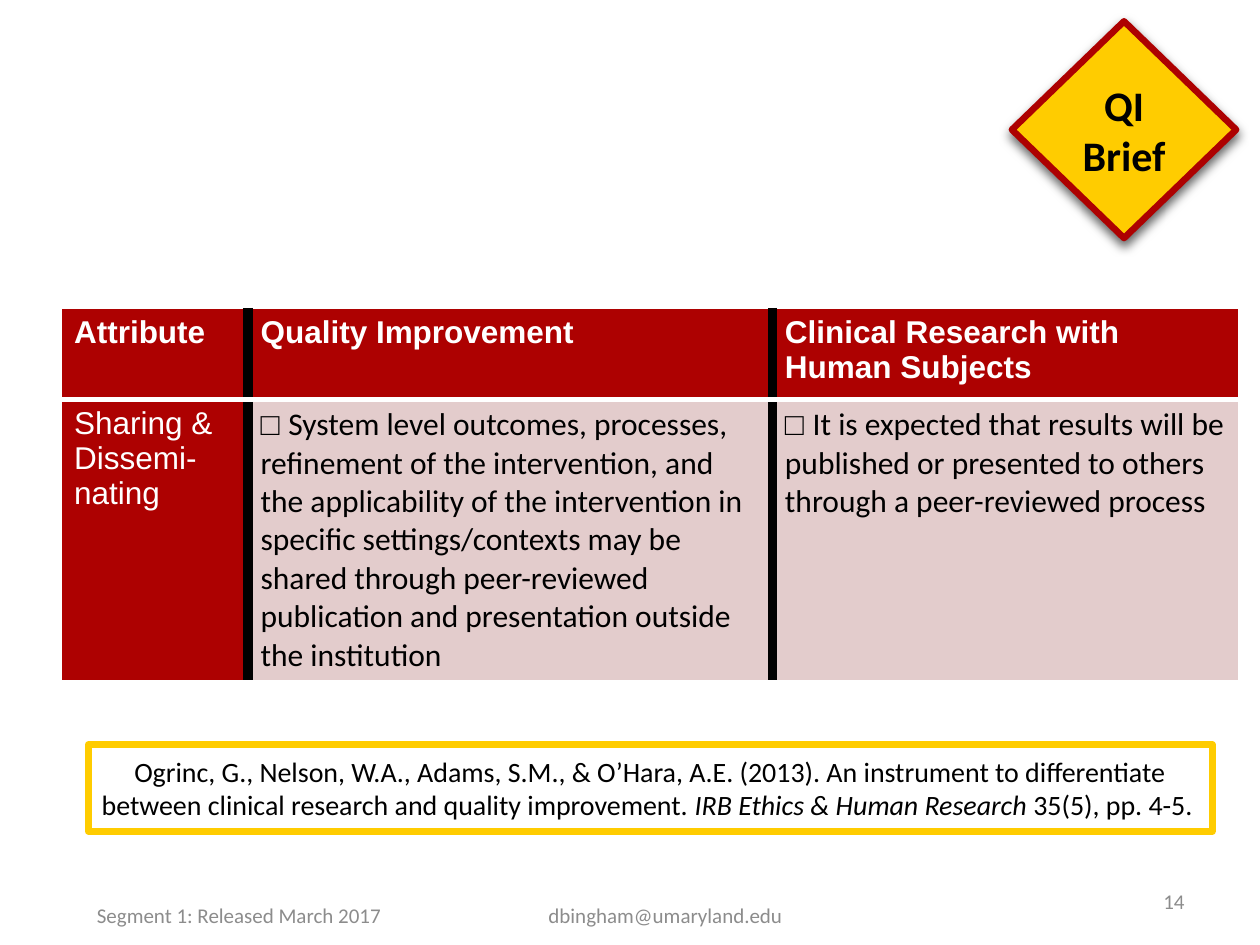
from dataclasses import dataclass

from lxml import etree
from pptx import Presentation
from pptx.dml.color import RGBColor
from pptx.enum.shapes import MSO_SHAPE
from pptx.enum.text import MSO_ANCHOR, PP_ALIGN
from pptx.oxml.ns import qn
from pptx.util import Cm, Length, Pt

DIAMOND, RECT = MSO_SHAPE.FLOWCHART_DECISION, MSO_SHAPE.RECTANGLE
MIDDLE = MSO_ANCHOR.MIDDLE
LEFT, CENTER, RIGHT = PP_ALIGN.LEFT, PP_ALIGN.CENTER, PP_ALIGN.RIGHT

RED = RGBColor(0xAD, 0x01, 0x01)
YELLOW = RGBColor(0xFF, 0xCC, 0x00)
PINK = RGBColor(0xE3, 0xCC, 0xCC)
GREY = RGBColor(0x8C, 0x8C, 0x8C)
BLACK = RGBColor(0, 0, 0)
WHITE = RGBColor(0xFF, 0xFF, 0xFF)


@dataclass
class Span:
    text: str
    font: str | None = None
    bold: bool | None = None
    italic: bool | None = None


@dataclass
class Box:
    left: Length
    top: Length
    width: Length
    height: Length


@dataclass
class Footer:
    text: str
    box: Box
    align: PP_ALIGN = CENTER


@dataclass
class Entry:
    spans: list[Span]
    fill: RGBColor
    color: RGBColor


def write(tf, spans: list[Span], size: int, color: RGBColor, align=CENTER, font="Calibri"):
    tf.word_wrap = True
    p = tf.paragraphs[0]
    p.alignment = align
    p.font.size, p.font.name = Pt(size), font
    p.font.color.rgb = color
    for span in spans:
        r = p.add_run()
        r.text = span.text
        if span.font:
            r.font.name = span.font
        r.font.bold, r.font.italic = span.bold, span.italic


def add_panel(s, kind, box: Box, fill: RGBColor, line: RGBColor, spans: list[Span], size: int):
    sp = s.shapes.add_shape(kind, box.left, box.top, box.width, box.height)
    sp.shadow.inherit = False
    sp.fill.solid()
    sp.fill.fore_color.rgb = fill
    sp.line.color.rgb = line
    sp.line.width = Pt(3.75)
    etree.SubElement(sp.line._get_or_add_ln(), qn("a:round"))
    sp.text_frame.vertical_anchor = MIDDLE
    write(sp.text_frame, spans, size, BLACK)
    return sp


def add_drop_shadow(sp):
    effects = sp._element.spPr.find(qn("a:effectLst"))
    shadow = etree.SubElement(effects, qn("a:outerShdw"), blurRad=str(Pt(6)),
                              dist=str(Pt(3)), dir="5400000", rotWithShape="0")
    color = etree.SubElement(shadow, qn("a:srgbClr"), val=str(BLACK))
    etree.SubElement(color, qn("a:alpha"), val="60000")


def add_border(cell, side: str, color: RGBColor, width: int):
    ln = etree.SubElement(cell._tc.get_or_add_tcPr(), qn(f"a:ln{side}"), w=str(Pt(width)))
    fill = etree.SubElement(ln, qn("a:solidFill"))
    etree.SubElement(fill, qn("a:srgbClr"), val=str(color))


def add_comparison(s, box: Box, widths: list[Length], heights: list[Length],
                   rows: list[list[Entry]]):
    table = s.shapes.add_table(len(rows), len(widths), box.left, box.top,
                               box.width, box.height).table
    table.first_row = table.horz_banding = False
    for column, width in zip(table.columns, widths):
        column.width = width
    for row, height in zip(table.rows, heights):
        row.height = height
    inner, outer = (BLACK, 6), (WHITE, 1)
    for i, entries in enumerate(rows):
        for j, entry in enumerate(entries):
            cell = table.cell(i, j)
            # Borders come before the fill in the cell properties
            add_border(cell, "L", *(inner if j else outer))
            add_border(cell, "R", *(inner if j < len(widths) - 1 else outer))
            add_border(cell, "T", WHITE, 3 if i else 1)
            add_border(cell, "B", WHITE, 1 if i else 3)
            cell.fill.solid()
            cell.fill.fore_color.rgb = entry.fill
            write(cell.text_frame, entry.spans, 18, entry.color, LEFT, "Arial")


def add_footer(s, footer: Footer):
    box = footer.box
    sp = s.shapes.add_textbox(box.left, box.top, box.width, box.height)
    sp.text_frame.vertical_anchor = MIDDLE
    write(sp.text_frame, [Span(footer.text)], 12, GREY, footer.align)


def heading(text: str, bold: bool = True) -> Entry:
    return Entry([Span(text, bold=bold)], RED, WHITE)


def checkbox(text: str) -> Entry:
    return Entry([Span("□ ", "Arial", True), Span(text, "Calibri", False)], PINK, BLACK)


ROWS = [
    [heading("Attribute"), heading("Quality Improvement"),
     heading("Clinical Research with Human Subjects")],
    [heading("Sharing & Dissemi-nating", bold=False),
     checkbox("System level outcomes, processes, refinement of the intervention, and the "
              "applicability of the intervention in specific settings/contexts may be shared "
              "through peer-reviewed publication and presentation outside the institution"),
     checkbox("It is expected that results will be published or presented to others "
              "through a peer-reviewed process")],
]

CITATION = [
    Span("Ogrinc, G., Nelson, W.A., Adams, S.M., & O’Hara, A.E. (2013). An instrument to "
         "differentiate between clinical research and quality improvement. "),
    Span("IRB Ethics & Human Research ", italic=True),
    Span("35(5), pp. 4-5. "),
]

FOOTERS = [
    Footer("Segment 1: Released March 2017", Box(Cm(1.63), Cm(17.93), Cm(6.38), Cm(1.02))),
    Footer("dbingham@umaryland.edu", Box(Cm(9.68), Cm(17.93), Cm(7.47), Cm(1.02))),
    Footer("14", Box(Cm(18.21), Cm(17.65), Cm(5.92), Cm(1.02)), RIGHT),
]


def main():
    prs = Presentation()
    prs.slide_width, prs.slide_height = Cm(25.4), Cm(19.05)
    s = prs.slides.add_slide(prs.slide_layouts[6])

    # Corner sign
    sign = add_panel(s, DIAMOND, Box(Cm(20.4), Cm(0.43), Cm(4.52), Cm(4.37)), YELLOW, RED,
                     [Span("QI Brief", bold=True)], 24)
    add_drop_shadow(sign)

    # Comparison table
    add_comparison(s, Box(Cm(1.24), Cm(6.22), Cm(23.73), Cm(7.42)),
                   [Cm(3.76), Cm(10.57), Cm(9.4)], [Cm(1.83), Cm(5.59)], ROWS)

    # Citation
    add_panel(s, RECT, Box(Cm(1.78), Cm(15.01), Cm(22.66), Cm(1.75)), WHITE, YELLOW,
              CITATION, 16)

    # Footers
    for footer in FOOTERS:
        add_footer(s, footer)

    prs.save("out.pptx")


if __name__ == "__main__":
    main()
